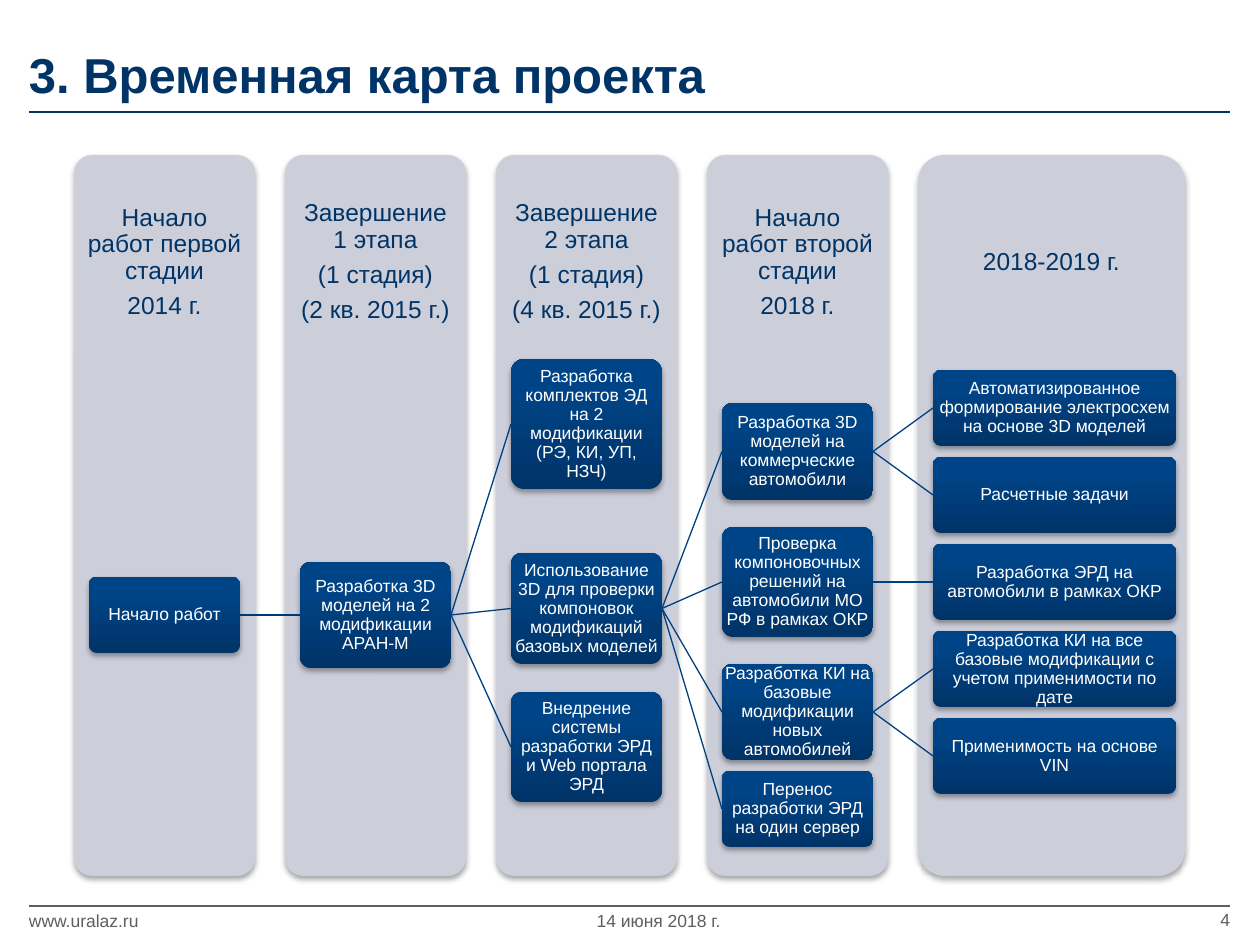
"""Build the project timeline slide."""
import lxml.etree
import pptx
import pptx.dml.color
import pptx.enum.shapes
import pptx.enum.text
import pptx.oxml
import pptx.oxml.ns
import pptx.util

PX = pptx.util.Inches(1) / 126
NAVY, GREY, WHITE = "003366", "5F5F5F", "FFFFFF"
ALIGN = pptx.enum.text.PP_ALIGN
ANCHOR = pptx.enum.text.MSO_ANCHOR
ROUNDED = pptx.enum.shapes.MSO_SHAPE.ROUNDED_RECTANGLE
COLUMN_LEFT, COLUMN_TOP, COLUMN_PITCH, COLUMN_HEIGHT = 74, 155, 211, 721
COLUMN_WIDTHS = [181, 181, 181, 181, 267]
COLUMN_PAD, HEADING_HEIGHT = 15, 215
SHADOW = (
    '<a:effectLst %s><a:outerShdw blurRad="40000" dist="23000" dir="5400000" '
    'rotWithShape="0"><a:srgbClr val="000000"><a:alpha val="35000"/></a:srgbClr>'
    "</a:outerShdw></a:effectLst>" % pptx.oxml.ns.nsdecls("a")
)

HEADINGS = [
    "Начало работ первой стадии\n2014 г.",
    "Завершение 1 этапа\n(1 стадия)\n(2 кв. 2015 г.)",
    "Завершение 2 этапа\n(1 стадия)\n(4 кв. 2015 г.)",
    "Начало работ второй стадии\n2018 г.",
    "2018-2019 г.",
]

TASKS = {
    "start": (0, 577, 76, "Начало работ"),
    "models": (1, 562, 106, "Разработка 3D моделей на 2 модификации АРАН-М"),
    "manuals": (2, 359, 130, "Разработка комплектов ЭД на 2 модификации (РЭ, КИ, УП, НЗЧ)"),
    "layout": (2, 553, 111, "Использование 3D для проверки компоновок модификаций базовых моделей"),
    "portal": (2, 692, 110, "Внедрение системы разработки ЭРД и Web портала ЭРД"),
    "commercial": (3, 403, 97, "Разработка 3D моделей на коммерческие автомобили"),
    "check": (3, 527, 110, "Проверка компоновочных решений на автомобили МО РФ в рамках ОКР"),
    "catalogue": (3, 664, 96, "Разработка КИ на базовые модификации новых автомобилей"),
    "server": (3, 771, 76, "Перенос разработки ЭРД на один сервер"),
}

RESULTS = {
    "wiring": "Автоматизированное формирование электросхем на основе 3D моделей",
    "calculation": "Расчетные задачи",
    "repair": "Разработка ЭРД на автомобили в рамках ОКР",
    "all_catalogues": "Разработка КИ на все базовые модификации с учетом применимости по дате",
    "vin": "Применимость на основе VIN",
}
RESULT_TOP, RESULT_PITCH, RESULT_HEIGHT = 370, 87, 76

LINKS = {
    "start": ["models"],
    "models": ["manuals", "layout", "portal"],
    "layout": ["commercial", "check", "catalogue", "server"],
    "commercial": ["wiring", "calculation"],
    "check": ["repair"],
    "catalogue": ["all_catalogues", "vin"],
}


def px(*lengths):
    """Turn px lengths into EMU."""
    return [round(n * PX) for n in lengths]


def rgb(value):
    """Turn a hex string into a colour."""
    return pptx.dml.color.RGBColor.from_string(value)


def write(shape, text, size, color, align, anchor, insets, after=None, bold=False):
    """Fill a shape with formatted text."""
    tf = shape.text_frame
    tf.word_wrap = True
    tf.vertical_anchor = anchor
    tf.margin_left, tf.margin_top, tf.margin_right, tf.margin_bottom = px(*insets)
    tf.text = text
    for p in tf.paragraphs:
        p.alignment = align
        if after is not None:
            p.line_spacing = 0.9
            p.space_after = pptx.util.Pt(after)
        for r in p.runs:
            r.font.name = "Arial"
            r.font.size = pptx.util.Pt(size)
            r.font.bold = bold
            r.font.color.rgb = rgb(color)


def add_label(s, box, text, size, color, align, anchor=ANCHOR.MIDDLE, bold=False):
    """Add a text box without side insets."""
    tb = s.shapes.add_textbox(*px(*box))
    write(tb, text, size, color, align, anchor, (0, 6, 0, 6), bold=bold)


def add_panel(s, box):
    """Add a rounded rectangle with a soft shadow and no outline."""
    sp = s.shapes.add_shape(ROUNDED, *px(*box))
    sp.adjustments[0] = 0.1
    sp.line.fill.background()
    sp.shadow.inherit = False
    effects = sp._element.spPr.find(pptx.oxml.ns.qn("a:effectLst"))
    sp._element.spPr.replace(effects, pptx.oxml.parse_xml(SHADOW))
    return sp


def add_line(s, box, color, width):
    """Add a straight line without shadow."""
    line = s.shapes.add_connector(pptx.enum.shapes.MSO_CONNECTOR.STRAIGHT, *px(*box))
    line.line.color.rgb = rgb(color)
    line.line.width = pptx.util.Pt(width)
    lxml.etree.SubElement(line._element.spPr, pptx.oxml.ns.qn("a:effectLst"))
    return line


def add_column(s, index, heading):
    """Add a stage column with its heading."""
    left, width = COLUMN_LEFT + index * COLUMN_PITCH, COLUMN_WIDTHS[index]
    sp = add_panel(s, (left, COLUMN_TOP, width, COLUMN_HEIGHT))
    sp.fill.solid()
    sp.fill.fore_color.rgb = rgb("CCCFDA")
    tb = s.shapes.add_textbox(*px(left, COLUMN_TOP, width, HEADING_HEIGHT))
    write(tb, heading, 14, NAVY, ALIGN.CENTER, ANCHOR.MIDDLE, (13, 14, 13, 14), after=5)


def add_task(s, column, top, height, text):
    """Add a gradient task box inside a column."""
    left = COLUMN_LEFT + column * COLUMN_PITCH + COLUMN_PAD
    width = COLUMN_WIDTHS[column] - 2 * COLUMN_PAD
    if column == len(COLUMN_WIDTHS) - 1:
        width += 6
    sp = add_panel(s, (left, top, width, height))
    sp.fill.gradient()
    sp.fill.gradient_angle = 90
    bottom, upper = sp.fill.gradient_stops
    bottom.color.rgb = rgb("003468")
    upper.color.rgb = rgb("004488")
    upper.position = 0.8
    write(sp, text, 10, WHITE, ALIGN.CENTER, ANCHOR.MIDDLE, (0, 0, 0, 0), after=3.5)
    return sp


def add_link(s, source, target, color):
    """Join the right side of one box to the left side of another."""
    line = add_line(s, (0, 0, 0, 0), color, 0.75)
    line.begin_connect(source, 3)
    line.end_connect(target, 1)


def main():
    """Build and save the slide."""
    prs = pptx.Presentation()
    prs.slide_width, prs.slide_height = px(1260, 945)
    s = prs.slides.add_slide(prs.slide_layouts[6])

    add_line(s, (29, 112, 1230, 112), NAVY, 1.5)
    add_line(s, (29, 906, 1230, 906), GREY, 1)
    add_label(s, (29, 37, 970, 72), "3. Временная карта проекта", 28, NAVY,
              ALIGN.LEFT, ANCHOR.BOTTOM, bold=True)
    add_label(s, (568, 905, 181, 30), "14 июня 2018 г.", 10, GREY, ALIGN.CENTER)
    add_label(s, (1158, 904, 72, 30), "4", 10, GREY, ALIGN.RIGHT)
    add_label(s, (29, 905, 192, 30), "www.uralaz.ru", 10, GREY, ALIGN.LEFT)

    for i, heading in enumerate(HEADINGS):
        add_column(s, i, heading)
    boxes = {name: add_task(s, *task) for name, task in TASKS.items()}
    for i, (name, text) in enumerate(RESULTS.items()):
        top = RESULT_TOP + i * RESULT_PITCH
        boxes[name] = add_task(s, len(HEADINGS) - 1, top, RESULT_HEIGHT, text)
    for source, targets in LINKS.items():
        color = "003870" if source == "start" else "00407F"
        for target in targets:
            add_link(s, boxes[source], boxes[target], color)

    prs.save("out.pptx")


if __name__ == "__main__":
    main()
